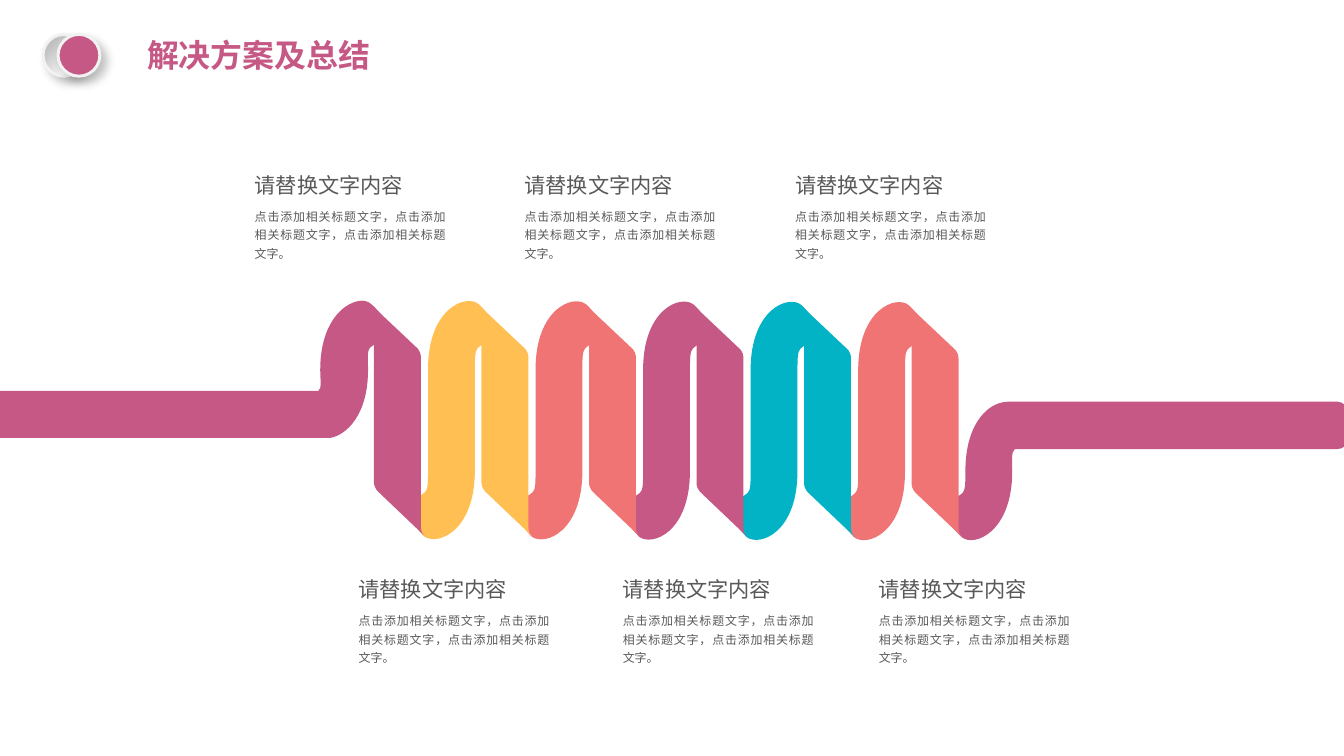
import pptx
import pptx.dml.color
import pptx.enum.shapes
import pptx.enum.text
import pptx.oxml
import pptx.oxml.ns
import pptx.util
import lxml.etree

Pt = pptx.util.Pt
qn = pptx.oxml.ns.qn
ALIGN = pptx.enum.text.PP_ALIGN

SLIDE_W, SLIDE_H = 1012.3, 569.5
FONT = "Roboto Condensed"
PINK, YELLOW, CORAL, TEAL, GREY = "C65885", "FFBF53", "F17475", "01B3C5", "595959"

TITLE = "解决方案及总结"
HEADING = "请替换文字内容"
BODY = "点击添加相关标题文字，点击添加相关标题文字，点击添加相关标题文字。"
NOTE_ROWS = [  # heading top, lefts of the notes
    (126, (184.8, 388.1, 591.8)),
    (430.7, (263, 462, 654.8)),
]
BODY_DROP = 24.8

TITLE_STYLE = {"size": Pt(24), "bold": True}
HEADING_STYLE = {"size": Pt(16)}
BODY_STYLE = {"size": Pt(9)}

LOOP_COLORS = [PINK, YELLOW, CORAL, PINK, TEAL, CORAL]
LOOP_LEFT, LOOP_PITCH, LOOP_DROP = 241.4, 81, 0.2

# Outlines: a pair is a straight line to a point, six numbers are a Bezier curve.
STRAND = [
    (35.3, 354.2), (35.3, 278.6),
    (35.3, 270, 35.3, 264.2, 37.4, 262),
    (43.9, 255.6, 50.4, 259.2, 51.8, 254.2),
    (54, 247.7, 43.9, 234, 38.2, 229),
    (28.8, 221, 0, 231.8, 0, 278),
    (0, 354.2),
    (0, 362.9, 0, 368.6, -2.2, 370.5),
    (-8.6, 376.6, -15.1, 373.7, -16.6, 378.4),
    (-18.7, 384.5, -8.6, 398.2, -2.9, 403.9),
    (7.2, 411.1, 35.3, 400.3, 35.3, 354.2),
]
FOLD = [
    (75.6, 397.4), (75.6, 269.3),
    (75.6, 267.8, 75.6, 264.2, 71.3, 260.8),
    (37.6, 229),
    (38.2, 229, 40.3, 231.8, 40.3, 235.4),
    (40.3, 363.6),
    (40.3, 364.3, 40.3, 367.9, 44.6, 371.5),
    (78.6, 403.9),
    (77.8, 403.2, 75.6, 401, 75.6, 397.4),
]
LEFT_TAIL = [
    (270, 226.8),
    (273.6, 226.1, 277.2, 226.8, 279.4, 229),
    (285.8, 234, 295.9, 247.7, 293.8, 254.2),
    (292.3, 259.2, 285.8, 255.6, 278.6, 262),
    (276.5, 264.2, 277.2, 270, 277.2, 278.6),
    (277.2, 313.2, 260.6, 327.6, 249.1, 329.8),
    (0, 329.8), (0, 294.5), (239.8, 294.5), (241.2, 292.3),
    (241.9, 289.4, 241.2, 284.4, 241.2, 278.6),
    (241.2, 244.1, 257.8, 229, 270, 226.8),
]
RIGHT_TAIL = [
    (759.6, 302.6), (1007.3, 302.6),
    (1011.6, 302.6, 1015.9, 306.7, 1015.9, 311),
    (1015.9, 329.8),
    (1015.9, 334.8, 1011.6, 338.4, 1007.3, 338.4),
    (764.6, 338.4), (763.9, 339.1),
    (761.8, 340.6, 762.5, 346.3, 762.5, 355),
    (762.5, 401, 733.7, 412.6, 724.3, 404.6),
    (718.6, 399.6, 708.5, 385.9, 710.6, 378.7),
    (712.1, 374.4, 718.6, 377.3, 725, 371.5),
    (727.2, 369.4, 727.2, 363.6, 727.2, 355),
    (727.2, 320.4, 743, 305.3, 755.3, 303.1),
    (756.7, 303, 758.2, 302.6, 759.6, 302.6),
]


def rgb(value):
    return pptx.dml.color.RGBColor.from_string(value)


def add_ribbon(s, outline, color, left=0, top=0):
    """Build the outline from its end points, then bend the curved segments."""
    ends = [(Pt(left + seg[-2]), Pt(top + seg[-1])) for seg in outline]
    builder = s.shapes.build_freeform(*ends[0], scale=1.0)
    builder.add_line_segments(ends[1:], close=True)
    sp = builder.convert_to_shape()
    lines = list(sp._element.iter(qn("a:lnTo")))
    for line, seg in zip(lines, outline[1:]):
        if len(seg) == 6:
            line.tag = qn("a:cubicBezTo")
            for n, (x, y) in enumerate((seg[:2], seg[2:4])):
                pt = lxml.etree.Element(qn("a:pt"))
                pt.set("x", str(Pt(left + x) - sp.left))
                pt.set("y", str(Pt(top + y) - sp.top))
                line.insert(n, pt)
    sp.shadow.inherit = False
    sp.fill.solid()
    sp.fill.fore_color.rgb = rgb(color)
    sp.line.fill.background()


def add_text(s, box, text, style, color, **para):
    tf = s.shapes.add_textbox(*map(Pt, box)).text_frame
    tf.word_wrap = True
    p = tf.paragraphs[0]
    for name, value in para.items():
        setattr(p, name, value)
    r = p.add_run()
    r.text = text
    for name, value in {"name": FONT, **style}.items():
        setattr(r.font, name, value)
    r.font.color.rgb = rgb(color)


def add_disc(s, left):
    """Add a title disc with a pale rim and a soft shadow; return its fill."""
    sp = s.shapes.add_shape(pptx.enum.shapes.MSO_SHAPE.OVAL, Pt(left), Pt(25.9), Pt(31.5), Pt(31.5))
    sp.line.color.rgb = rgb("F2F2F2")
    sp.line.width = Pt(2.25)
    sp.shadow.inherit = False
    effects = sp._element.spPr.find(qn("a:effectLst"))
    effects.append(pptx.oxml.parse_xml(
        f'<a:outerShdw {pptx.oxml.ns.nsdecls("a")} blurRad="{Pt(7)}" dist="{Pt(5.9)}" '
        'dir="2700000" algn="tl" rotWithShape="0">'
        '<a:srgbClr val="000000"><a:alpha val="23000"/></a:srgbClr></a:outerShdw>'))
    return sp.fill


def main():
    prs = pptx.Presentation()
    prs.slide_width, prs.slide_height = Pt(SLIDE_W), Pt(SLIDE_H)
    s = prs.slides.add_slide(prs.slide_layouts[6])

    back = add_disc(s, 32.4)
    back.gradient()
    back.gradient_angle = 315
    for stop, (position, color) in zip(back.gradient_stops, [(0.2, "BFBFBF"), (0.8, "FFFFFF")]):
        stop.position = position
        stop.color.rgb = rgb(color)
    front = add_disc(s, 43.7)
    front.solid()
    front.fore_color.rgb = rgb(PINK)
    add_text(s, (103.7, 26.6, 260.6, 39.6), TITLE, TITLE_STYLE, PINK, line_spacing=0.9)

    add_ribbon(s, RIGHT_TAIL, PINK)
    for i, color in reversed(list(enumerate(LOOP_COLORS))):
        place = (LOOP_LEFT + i * LOOP_PITCH, i * LOOP_DROP)
        if i:
            add_ribbon(s, STRAND, color, *place)
        else:
            add_ribbon(s, LEFT_TAIL, color)
        add_ribbon(s, FOLD, color, *place)

    for top, lefts in NOTE_ROWS:
        for left in lefts:
            add_text(s, (left, top, 146.9, 26.6), HEADING, HEADING_STYLE, GREY)
            add_text(s, (left, top + BODY_DROP, 157.7, 49.7), BODY, BODY_STYLE, GREY,
                     alignment=ALIGN.JUSTIFY, line_spacing=1.3)
    prs.save("out.pptx")


if __name__ == "__main__":
    main()
